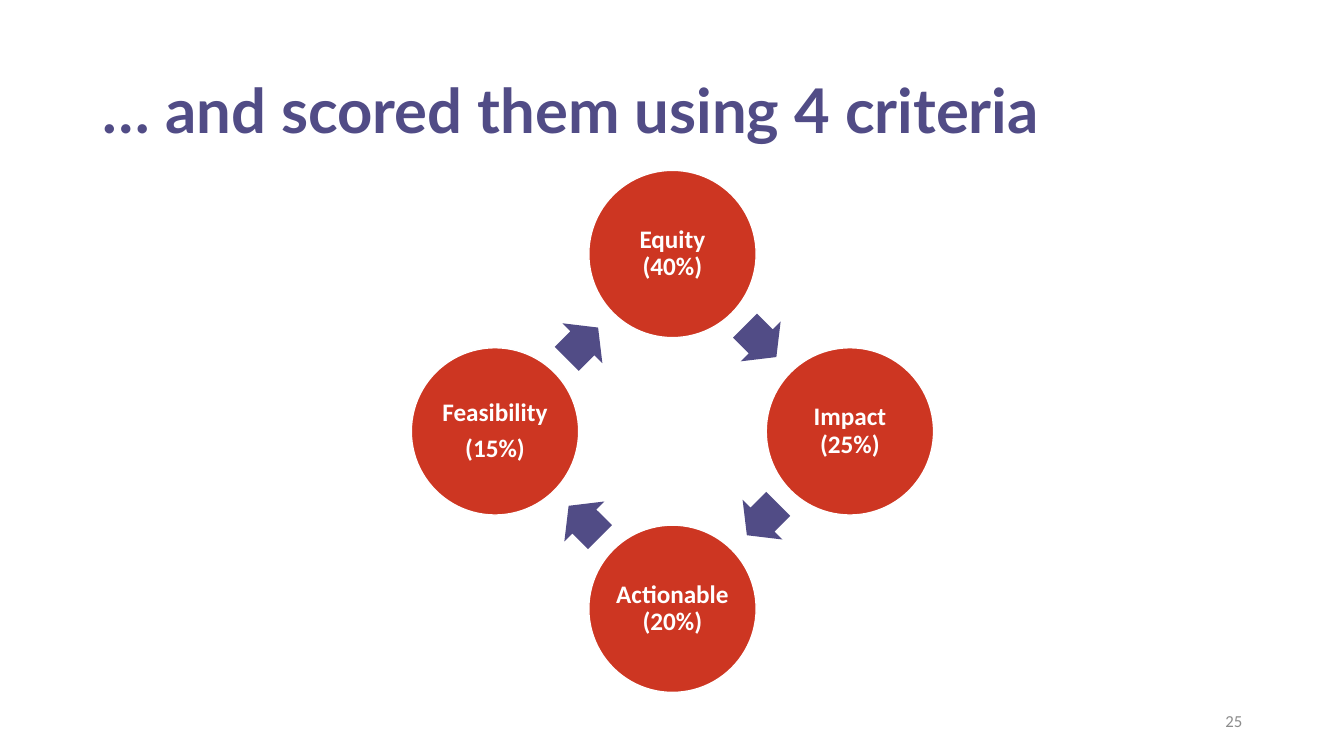
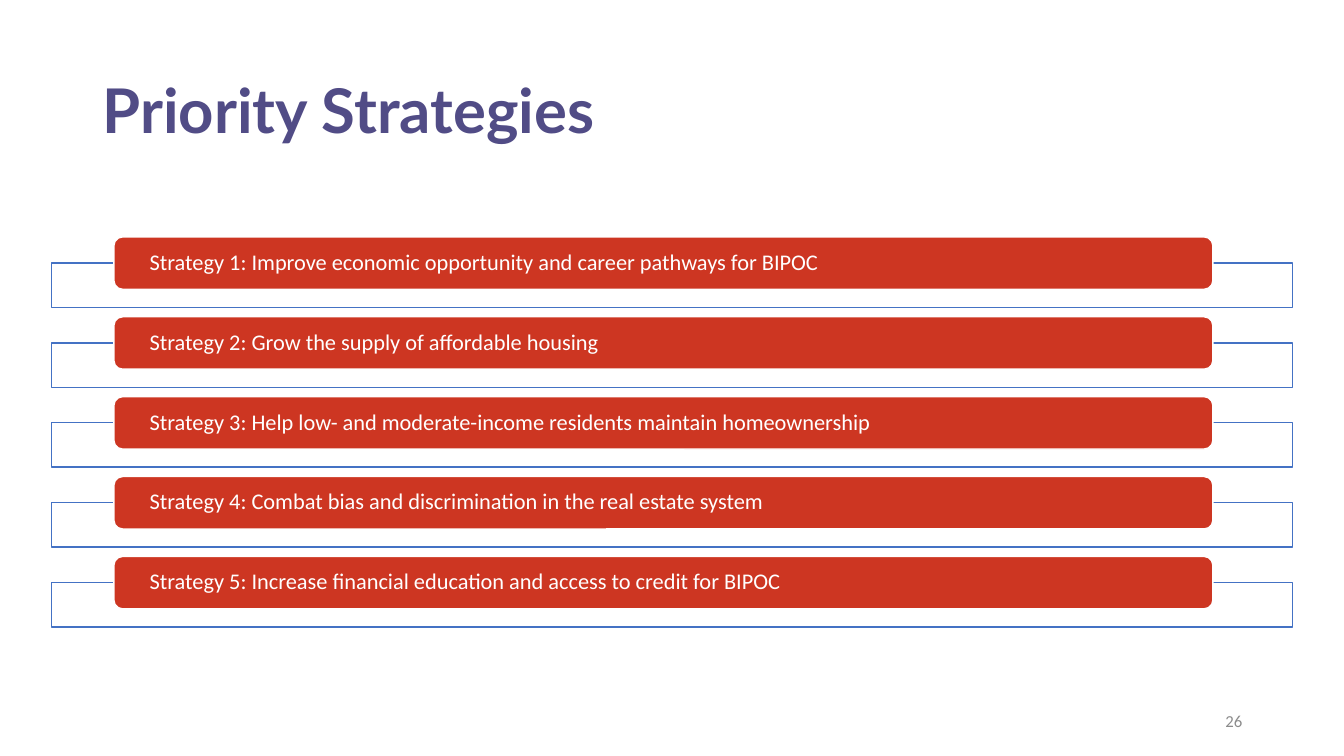
import math
from pptx import Presentation
from pptx import util as u
from pptx.dml import color
from pptx.enum import shapes, text

PURPLE, RED, BLUE, WHITE, GREY = "514C86", "CD3622", "4472C4", "FFFFFF", "8C8C8C"
ALIGN = text.PP_ALIGN

TITLE = {"font": {"name": "Lato", "size": u.Pt(44), "bold": True}, "color": PURPLE,
         "paragraph": {"line_spacing": 0.9}, "frame": {}}
NUMBER = {"font": {"name": "Calibri", "size": u.Pt(12)}, "color": GREY,
          "paragraph": {"alignment": ALIGN.RIGHT}, "frame": {}}
CRITERION = {"font": {"name": "Calibri", "size": u.Pt(18), "bold": True}, "color": WHITE,
             "paragraph": {"alignment": ALIGN.CENTER, "line_spacing": 0.9, "space_after": u.Pt(6.3)},
             "frame": {"margin_left": 0, "margin_right": 0, "margin_top": 0, "margin_bottom": 0}}
STRATEGY = {"font": {"name": "Calibri", "size": u.Pt(16)}, "color": WHITE,
            "paragraph": {"alignment": ALIGN.LEFT, "line_spacing": 0.9},
            "frame": {"margin_left": u.Inches(0.33), "margin_right": u.Inches(0.33),
                      "margin_top": 0, "margin_bottom": 0}}


def write(box, lines, style):
    frame = box.text_frame
    frame.word_wrap = True
    frame.vertical_anchor = text.MSO_ANCHOR.MIDDLE
    for name, value in style["frame"].items():
        setattr(frame, name, value)
    for index, line in enumerate(lines):
        para = frame.paragraphs[0] if index == 0 else frame.add_paragraph()
        para.text = line
        for name, value in style["paragraph"].items():
            setattr(para, name, value)
        for span in para.runs:
            for name, value in style["font"].items():
                setattr(span.font, name, value)
            span.font.color.rgb = color.RGBColor.from_string(style["color"])


def draw(page, kind, place, fill, line=None):
    shape = page.shapes.add_shape(kind, *map(u.Inches, place))
    shape.shadow.inherit = False
    shape.fill.solid()
    shape.fill.fore_color.rgb = color.RGBColor.from_string(fill)
    if line:
        shape.line.color.rgb = color.RGBColor.from_string(line)
        shape.line.width = u.Pt(1)
    else:
        shape.line.fill.background()
    return shape


deck = Presentation()
deck.slide_width, deck.slide_height = u.Inches(13.33), u.Inches(7.5)

pages = []
for number, title in enumerate(["… and scored them using 4 criteria", "Priority Strategies"], 25):
    page = deck.slides.add_slide(deck.slide_layouts[6])
    for place, words, style in [((0.92, 0.4, 11.5, 1.45), title, TITLE),
                                ((9.42, 6.95, 3, 0.4), str(number), NUMBER)]:
        write(page.shapes.add_textbox(*map(u.Inches, place)), [words], style)
    pages.append(page)
criteria_page, strategies_page = pages

center_x, center_y = 6.67, 4.28
ring, circle = 1.76, 1.66
arrow_ring, arrow_width, arrow_height = 1.25, 0.44, 0.56
criteria = [["Equity (40%)"], ["Impact (25%)"], ["Actionable\v(20%)"], ["Feasibility", "(15%)"]]
for index, lines in enumerate(criteria):
    angle = math.radians(90 * index - 90)
    left = center_x + ring * math.cos(angle) - circle / 2
    top = center_y + ring * math.sin(angle) - circle / 2
    disc = draw(criteria_page, shapes.MSO_SHAPE.OVAL, (left, top, circle, circle), RED, WHITE)
    write(disc, lines, CRITERION)

    angle = math.radians(90 * index - 45.6)
    left = center_x + arrow_ring * math.cos(angle) - arrow_width / 2
    top = center_y + arrow_ring * math.sin(angle) - arrow_height / 2
    arrow = draw(criteria_page, shapes.MSO_SHAPE.RIGHT_ARROW,
                 (left, top, arrow_width, arrow_height), PURPLE)
    arrow.rotation = 45 + 90 * index
    arrow.adjustments[0], arrow.adjustments[1] = 0.6, 0.5

strategies = [
    "Improve economic opportunity and career pathways for BIPOC",
    "Grow the supply of affordable housing",
    "Help low- and moderate-income residents maintain homeownership",
    "Combat bias and discrimination in the real estate system",
    "Increase financial education and access to credit for BIPOC",
]
first_top, last_top = 2.35, 5.52
pitch = (last_top - first_top) / (len(strategies) - 1)
for index, strategy in enumerate(strategies):
    top = first_top + index * pitch
    draw(strategies_page, shapes.MSO_SHAPE.RECTANGLE, (0.51, top + 0.26, 12.31, 0.44), WHITE, BLUE)
    bar = draw(strategies_page, shapes.MSO_SHAPE.ROUNDED_RECTANGLE, (1.13, top, 10.9, 0.52), RED, WHITE)
    write(bar, [f"Strategy {index + 1}: {strategy}"], STRATEGY)

deck.save("out.pptx")
